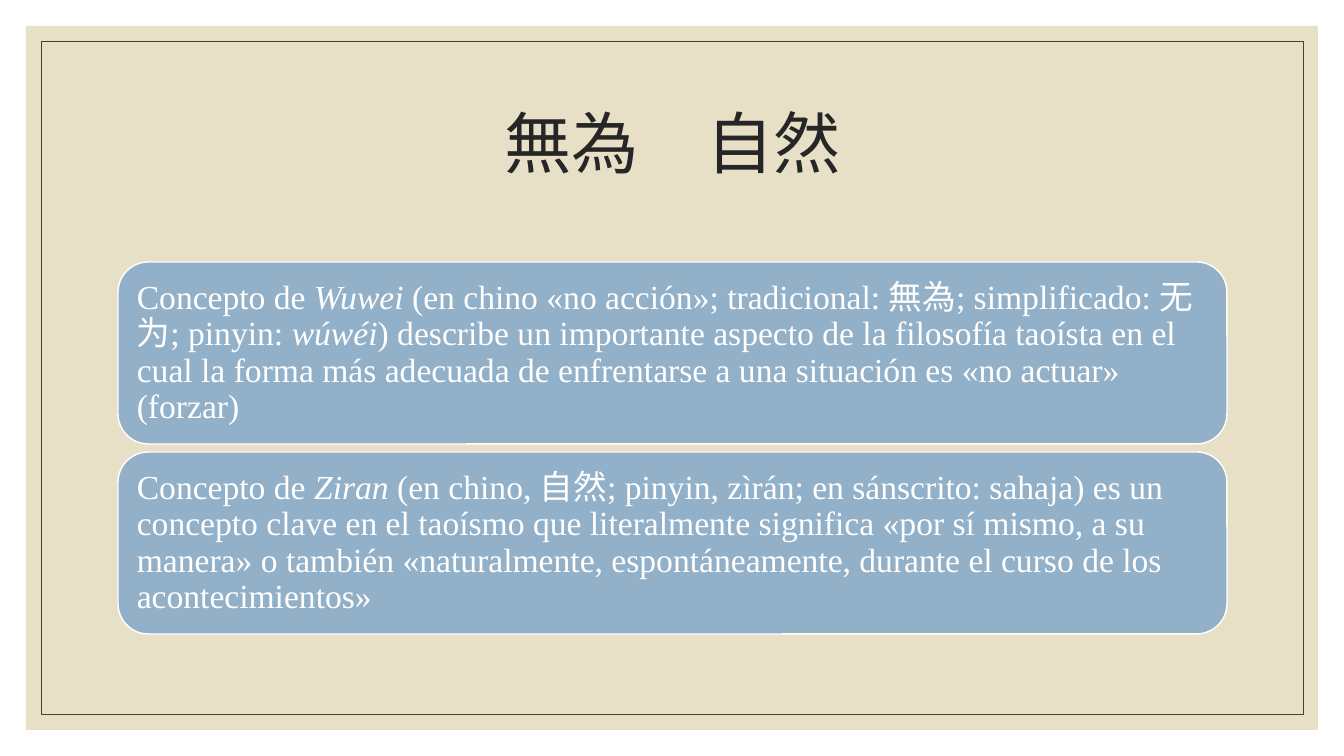
from dataclasses import dataclass

from pptx import Presentation
from pptx.dml.color import RGBColor
from pptx.enum.shapes import MSO_SHAPE as Shape
from pptx.enum.text import MSO_ANCHOR as Anchor, MSO_AUTO_SIZE as AutoSize, PP_ALIGN as Align
from pptx.util import Inches, Pt

TITLE = "無為　自然"
# Each concept is a list of (text, italic) pieces.
CONCEPTS = [
    [
        ("Concepto de ", False),
        ("Wuwei", True),
        (" (en chino «no acción»; tradicional: 無為; simplificado: 无为; pinyin: ", False),
        ("wúwéi", True),
        (") describe un importante aspecto de la filosofía taoísta en el cual la forma "
         "más adecuada de enfrentarse a una situación es «no actuar» (forzar)", False),
    ],
    [
        ("Concepto de ", False),
        ("Ziran", True),
        (" (en chino, 自然; pinyin, zìrán; en sánscrito: sahaja) es un concepto clave en "
         "el taoísmo que literalmente significa «por sí mismo, a su manera» o también "
         "«naturalmente, espontáneamente, durante el curso de los acontecimientos»", False),
    ],
]


@dataclass(frozen=True)
class Theme:
    sand: RGBColor = RGBColor.from_string("E7E0C7")
    border: RGBColor = RGBColor.from_string("404040")
    ink: RGBColor = RGBColor.from_string("262626")
    blue: RGBColor = RGBColor.from_string("92B0C8")
    white: RGBColor = RGBColor.from_string("FFFFFF")
    title_font: str = "Arial"
    body_font: str = "Times New Roman"
    title_size: int = Pt(48)
    body_size: int = Pt(24)


THEME = Theme()
PX_PER_INCH = 100.8
PANEL = (26, 26, 1292, 704)
FRAME = (41, 41, 1262, 673)
TITLE_BOX = (118, 71, 1109, 151)
CARD_LEFT, CARD_TOP, CARD_WIDTH, CARD_HEIGHT, CARD_GAP = 118, 262, 1109, 182, 8
INSET = 10


def px(length):
    return Inches(length / PX_PER_INCH)


def apply(target, **values):
    for name, value in values.items():
        setattr(target, name, value)


def add_block(slide, kind, box, fill=None, line=None, weight=0):
    block = slide.shapes.add_shape(kind, *map(px, box))
    block.shadow.inherit = False
    if fill is None:
        block.fill.background()
    else:
        block.fill.solid()
        block.fill.fore_color.rgb = fill
    if line is None:
        block.line.fill.background()
    else:
        block.line.color.rgb = line
        block.line.width = Pt(weight)
    return block


def add_title(slide):
    title = slide.shapes.title
    # The placeholder comes first in the layout; bring it in front of the panel.
    title.element.getparent().append(title.element)
    left, top, width, height = map(px, TITLE_BOX)
    apply(title, left=left, top=top, width=width, height=height)
    title.text_frame.text = TITLE
    apply(title.text_frame, vertical_anchor=Anchor.MIDDLE, word_wrap=True,
          auto_size=AutoSize.NONE)
    heading = title.text_frame.paragraphs[0]
    apply(heading, alignment=Align.CENTER, line_spacing=0.9)
    font = heading.runs[0].font
    apply(font, name=THEME.title_font, size=THEME.title_size)
    font.color.rgb = THEME.ink


def add_concept(slide, index, pieces):
    top = CARD_TOP + index * (CARD_HEIGHT + CARD_GAP)
    card = add_block(slide, Shape.ROUNDED_RECTANGLE,
                     (CARD_LEFT, top, CARD_WIDTH, CARD_HEIGHT),
                     THEME.blue, THEME.white, 1)
    inset = px(INSET)
    apply(card.text_frame, word_wrap=True, vertical_anchor=Anchor.MIDDLE,
          margin_left=inset, margin_right=inset, margin_top=inset, margin_bottom=inset)
    paragraph = card.text_frame.paragraphs[0]
    apply(paragraph, alignment=Align.LEFT, line_spacing=0.9)
    for text, italic in pieces:
        run = paragraph.add_run()
        run.text = text
        apply(run.font, name=THEME.body_font, size=THEME.body_size, italic=italic)
        run.font.color.rgb = THEME.white


def main():
    deck = Presentation()
    apply(deck, slide_width=px(1344), slide_height=px(756))
    slide = deck.slides.add_slide(deck.slide_layouts.get_by_name("Title Only"))
    add_block(slide, Shape.RECTANGLE, PANEL, fill=THEME.sand)
    add_block(slide, Shape.RECTANGLE, FRAME, line=THEME.border, weight=0.5)
    add_title(slide)
    for index, pieces in enumerate(CONCEPTS):
        add_concept(slide, index, pieces)
    deck.save("out.pptx")


if __name__ == "__main__":
    main()
